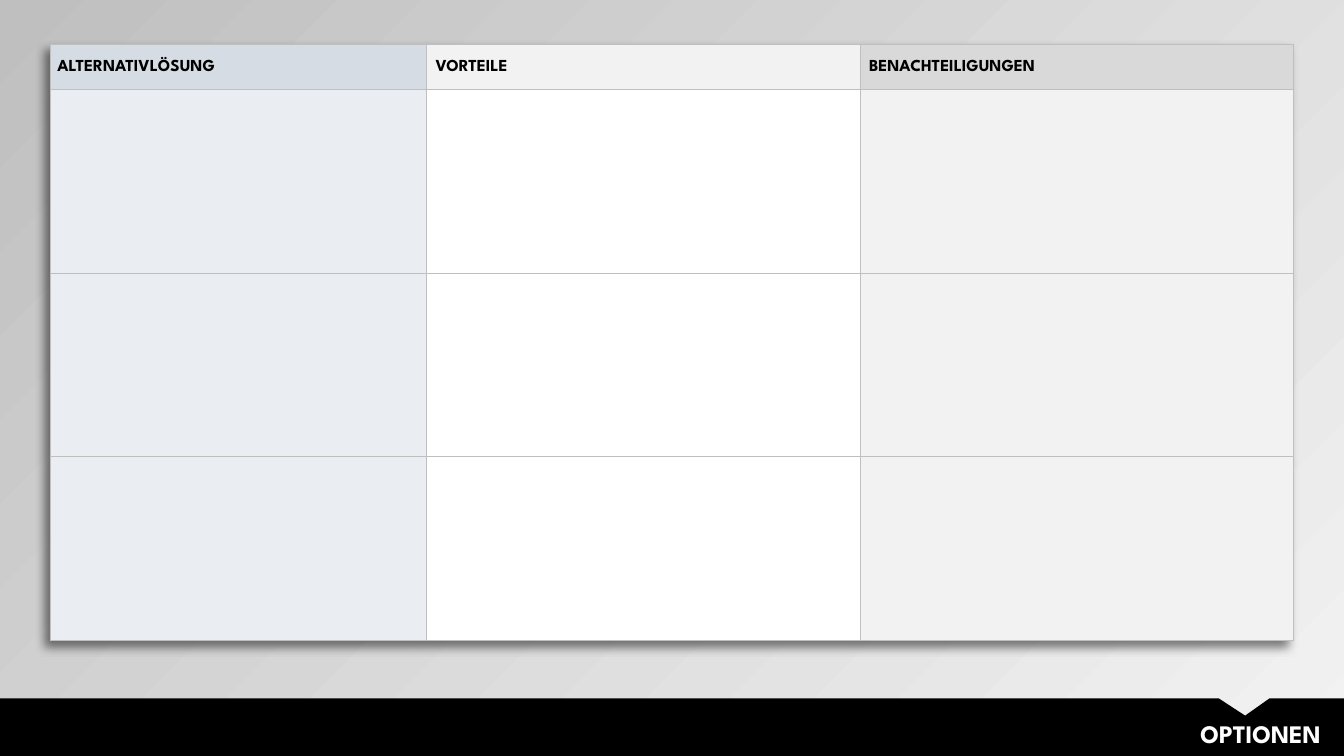
from lxml.etree import SubElement
from pptx import Presentation
from pptx.dml.color import RGBColor
from pptx.enum.text import MSO_ANCHOR, PP_ALIGN
from pptx.oxml import parse_xml
from pptx.oxml.ns import nsdecls, qn
from pptx.util import Inches, Pt

FONT = "League Spartan"
COLORS = {
    "black": "000000", "white": "FFFFFF", "border": "BFBFBF",
    "light": "F2F2F2", "grey": "D9D9D9", "blue": "D6DCE4", "pale": "EAEEF3",
}
COLUMNS = [
    ("ALTERNATIVLÖSUNG", 3.73, "blue", "pale", 0.07),
    ("VORTEILE", 4.3, "light", "white", 0.09),
    ("BENACHTEILIGUNGEN", 4.3, "grey", "light", 0.09),
]
ROWS = 3
HEADER_H = 0.45


def rgb(name):
    return RGBColor.from_string(COLORS[name])


def add_run(p, text, size, color):
    r = p.add_run()
    r.text = text
    r.font.name = FONT
    r.font.size = Pt(size)
    r.font.bold = True
    r.font.color.rgb = rgb(color)


def set_borders(cell):
    tc_pr = cell._tc.get_or_add_tcPr()
    for i, side in enumerate("LRTB"):
        tc_pr.insert(i, parse_xml(
            f'<a:ln{side} {nsdecls("a")} w="{Pt(0.5)}"><a:solidFill>'
            f'<a:srgbClr val="{COLORS["border"]}"/></a:solidFill></a:ln{side}>'))


def add_shadow(table):
    effects = parse_xml(f'<a:effectLst {nsdecls("a")}/>')
    shadow = SubElement(effects, qn("a:outerShdw"), blurRad=str(Inches(0.1)),
                        dist=str(Inches(0.08)), dir="8100000", rotWithShape="0")
    color = SubElement(shadow, qn("a:srgbClr"), val=COLORS["black"])
    SubElement(color, qn("a:alpha"), val="50000")
    table._tbl.tblPr.insert(0, effects)


def paint_background(s):
    fill = s.background.fill
    fill.gradient()
    fill.gradient_angle = 135
    for stop, color in zip(fill.gradient_stops, ("light", "border")):
        stop.color.rgb = rgb(color)


def add_options_table(s, x, y, w, h):
    table = s.shapes.add_table(ROWS + 1, len(COLUMNS), Inches(x), Inches(y),
                               Inches(w), Inches(h)).table
    table.first_row = table.horz_banding = False
    add_shadow(table)
    for i, row in enumerate(table.rows):
        row.height = Inches((h - HEADER_H) / ROWS if i else HEADER_H)
    for j, (title, width, head, body, inset) in enumerate(COLUMNS):
        table.columns[j].width = Inches(width)
        for i in range(ROWS + 1):
            cell = table.cell(i, j)
            cell.fill.solid()
            cell.fill.fore_color.rgb = rgb(body if i else head)
            set_borders(cell)
        cell = table.cell(0, j)
        cell.vertical_anchor = MSO_ANCHOR.MIDDLE
        cell.margin_left = Inches(inset)
        cell.margin_right = Inches(0.01)
        cell.margin_top = cell.margin_bottom = 0
        add_run(cell.text_frame.paragraphs[0], title, 12, "black")


def add_footer(s, x, y, w, h):
    notch = [(12.09, 0), (12.35, 0.17), (12.59, 0)]
    points = notch + [(w, 0), (w, h), (0, h)]
    builder = s.shapes.build_freeform(Inches(x), Inches(y))
    builder.add_line_segments(
        [(Inches(x + dx), Inches(y + dy)) for dx, dy in points], close=True)
    bar = builder.convert_to_shape()
    bar.shadow.inherit = False
    bar.fill.solid()
    bar.fill.fore_color.rgb = rgb("black")
    bar.line.fill.background()

    label = s.shapes.add_textbox(Inches(x + 4.14), Inches(y + 0.15),
                                 Inches(9.06), Inches(0.4))
    tf = label.text_frame
    tf.word_wrap = True
    p = tf.paragraphs[0]
    p.alignment = PP_ALIGN.RIGHT
    add_run(p, "OPTIONEN", 18, "white")


def main():
    prs = Presentation()
    prs.slide_width = Inches(13.33)
    prs.slide_height = Inches(7.5)
    s = prs.slides.add_slide(prs.slide_layouts[6])
    paint_background(s)
    add_options_table(s, 0.5, 0.44, 12.33, 5.91)
    add_footer(s, 0, 6.93, 13.33, 0.57)
    prs.save("out.pptx")


if __name__ == "__main__":
    main()
